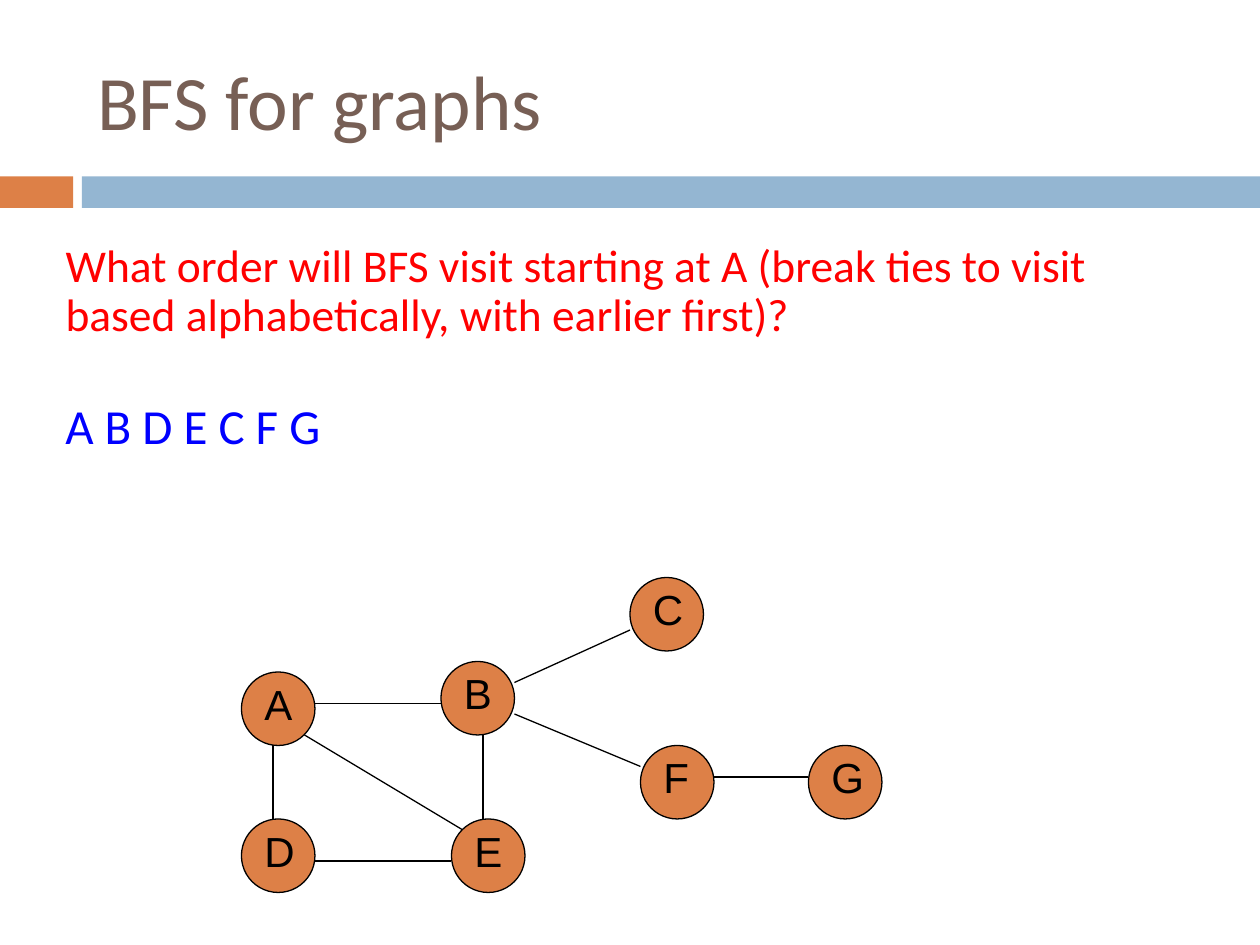
from lxml.etree import SubElement
from pptx import Presentation
from pptx.dml.color import RGBColor
from pptx.enum.shapes import MSO_CONNECTOR, MSO_SHAPE
from pptx.enum.text import MSO_ANCHOR, MSO_AUTO_SIZE, PP_ALIGN
from pptx.oxml.ns import qn
from pptx.util import Inches, Pt

BROWN = RGBColor(0x77, 0x5F, 0x55)
ORANGE = RGBColor(0xDD, 0x80, 0x47)
STEEL = RGBColor(0x94, 0xB6, 0xD2)
RED = RGBColor(0xFF, 0, 0)
BLUE = RGBColor(0, 0, 0xFF)
BLACK = RGBColor(0, 0, 0)

TITLE = "BFS for graphs"
QUESTION = ("What order will BFS visit starting at A "
            "(break ties to visit based alphabetically, with earlier first)?")
ANSWER = "A B D E C F G"

UNIT = Inches(1) // 12
NODE_SIZE = 7
LABEL_SIZE = 6
NODES = {
    "B": (42, 63), "D": (23, 78), "E": (43, 78), "F": (61, 71),
    "A": (23, 64), "C": (60, 55), "G": (77, 71),
}
EDGES = [
    ("A", (7, 3), "B", (0, 4)),
    ("A", (3, 7), "D", (3, 0)),
    ("D", (7, 4), "E", (0, 4)),
    ("E", (3, 0), "B", (4, 7)),
    ("A", (6, 6), "E", (1, 1)),
    ("B", (7, 2), "C", (0, 5)),
    ("B", (7, 5), "F", (0, 2)),
    ("F", (7, 3), "G", (0, 3)),
]
BANDS = [(0, 0.58, ORANGE), (0.65, 9.35, STEEL)]


def place(part, left, top, width, height):
    part.left, part.top = Inches(left), Inches(top)
    part.width, part.height = Inches(width), Inches(height)


def write(part, text, font_name, size, color, anchor=MSO_ANCHOR.TOP, wrap=True):
    frame = part.text_frame
    frame.text = text
    frame.word_wrap = wrap
    frame.auto_size = MSO_AUTO_SIZE.NONE
    frame.vertical_anchor = anchor
    paragraph = frame.paragraphs[0]
    paragraph.alignment = PP_ALIGN.LEFT
    paragraph.font.name = font_name
    paragraph.font.size = Pt(size)
    paragraph.font.color.rgb = color
    return paragraph


def add_filled(shapes, preset, box, color):
    filled = shapes.add_shape(preset, *box)
    filled.shadow.inherit = False
    filled.fill.solid()
    filled.fill.fore_color.rgb = color
    return filled


def add_node(shapes, letter, column, row):
    node = shapes.add_group_shape().shapes
    left, top = column * UNIT, row * UNIT
    circle = add_filled(node, MSO_SHAPE.OVAL,
                        (left, top, NODE_SIZE * UNIT, NODE_SIZE * UNIT), ORANGE)
    circle.line.color.rgb = BLACK
    circle.line.width = Pt(0.75)
    label = node.add_textbox(left + UNIT, top, LABEL_SIZE * UNIT, LABEL_SIZE * UNIT)
    write(label, letter, "Arial", 24, BLACK)


def add_edge(shapes, start, start_offset, end, end_offset):
    ends = [(base + offset) * UNIT
            for node, offsets in ((start, start_offset), (end, end_offset))
            for base, offset in zip(NODES[node], offsets)]
    edge = shapes.add_connector(MSO_CONNECTOR.STRAIGHT, *ends)
    edge.line.color.rgb = BLACK
    edge.line.width = Pt(0.75)
    SubElement(edge._element.spPr, qn("a:effectLst"))


def main():
    deck = Presentation()
    deck.slide_width, deck.slide_height = Inches(10), Inches(7.5)
    slide = deck.slides.add_slide(deck.slide_layouts[1])
    shapes = slide.shapes

    for left, width, color in BANDS:
        box = [Inches(length) for length in (left, 1.4, width, 0.25)]
        add_filled(shapes, MSO_SHAPE.RECTANGLE, box, color).line.fill.background()

    place(shapes.title, 0.67, 0.25, 8.92, 1.08)
    write(shapes.title, TITLE, "Calibri", 44, BROWN, MSO_ANCHOR.MIDDLE)

    body = slide.placeholders[1]
    place(body, 0.42, 1.88, 9.08, 1.37)
    question = write(body, QUESTION, "Calibri", 26, RED)
    question.line_spacing = 0.9
    question.space_before = Pt(7)
    properties = question._p.get_or_add_pPr()
    properties.set("marL", "0")
    properties.set("indent", "0")
    SubElement(properties, qn("a:buNone"))

    for letter, (column, row) in NODES.items():
        add_node(shapes, letter, column, row)
    for edge in EDGES:
        add_edge(shapes, *edge)

    answer = shapes.add_textbox(Inches(0.42), Inches(3.09), Inches(2.41), Inches(0.57))
    write(answer, ANSWER, "Calibri", 28, BLUE, wrap=False)

    deck.save("out.pptx")


if __name__ == "__main__":
    main()
